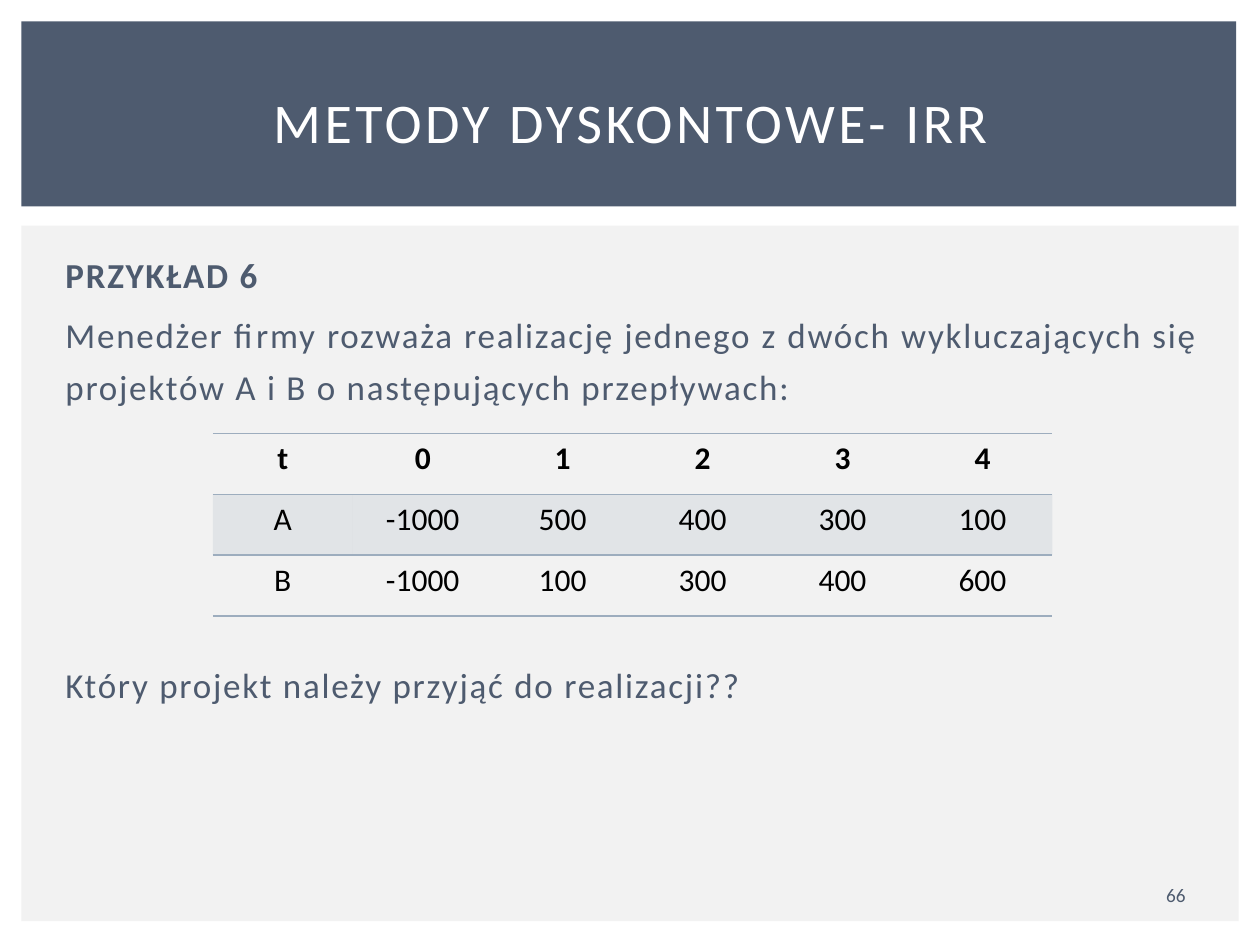
from collections import namedtuple

from lxml import etree
from pptx import Presentation
from pptx import util as u
from pptx.dml.color import RGBColor
from pptx.enum import shapes, text
from pptx.oxml import ns

Box = namedtuple("Box", "left top width height")  # centimetres

COLORS = {"slate": "4E5B6F", "panel": "F2F2F2", "white": "FFFFFF",
          "black": "000000", "accent": "9DADBE"}
FONT = "Calibri"
PLAIN_TABLE = "{2D5ABB26-0587-4C30-8999-92F81FD0307C}"
CASH_FLOWS = [
    ["t", "0", "1", "2", "3", "4"],
    ["A", "-1000", "500", "400", "300", "100"],
    ["B", "-1000", "100", "300", "400", "600"],
]


def color(name):
    return RGBColor.from_string(COLORS[name])


def lengths(box):
    return [u.Cm(value) for value in box]


def inside(box, left, top, width, height):
    return Box(box.left + left, box.top + top, width, height)


def add_panel(page, box, fill):
    panel = page.shapes.add_shape(shapes.MSO_SHAPE.RECTANGLE, *lengths(box))
    panel.shadow.inherit = False
    panel.fill.solid()
    panel.fill.fore_color.rgb = color(fill)
    panel.line.fill.background()


def style(para, size, fill, bold=False, align=text.PP_ALIGN.CENTER, spacing=0):
    para.alignment = align
    para.font.name = FONT
    para.font.size = u.Pt(size)
    para.font.bold = bold
    para.font.color.rgb = color(fill)
    if spacing:
        for span in para.runs:
            span.font.bold = bold
            span.font.size = u.Pt(size)
            span.font._element.set("spc", str(spacing * 100))


def add_text_frame(page, box, anchor):
    frame = page.shapes.add_textbox(*lengths(box)).text_frame
    frame.word_wrap = True
    frame.vertical_anchor = anchor
    return frame


def add_header(page, box):
    add_panel(page, box, "slate")
    frame = add_text_frame(page, inside(box, 0.64, 0.56, 23.29, 2.92),
                           text.MSO_ANCHOR.MIDDLE)
    frame.text = "METODY DYSKONTOWE- IRR"
    style(frame.paragraphs[0], 32, "white", spacing=2)


def add_body(page, box):
    add_panel(page, box, "panel")

    # Problem text; the wide gap leaves room for the table
    frame = add_text_frame(page, inside(box, 0.64, 0.23, 23.34, 13.54),
                           text.MSO_ANCHOR.TOP)
    lines = [
        ("PRZYKŁAD 6", True, 4),
        ("Menedżer firmy rozważa realizację jednego z dwóch wykluczających się "
         "projektów A i B o następujących przepływach:", False, 4),
        ("Który projekt należy przyjąć do realizacji??", False, 140),
    ]
    frame.text = "\n".join(line for line, _, _ in lines)
    for para, (_, bold, gap) in zip(frame.paragraphs, lines):
        style(para, 20, "slate", bold, text.PP_ALIGN.JUSTIFY, spacing=1)
        para.line_spacing = 1.25
        para.space_before = u.Pt(gap)

    add_cash_flows(page, inside(box, 3.86, 4.19, 16.93, 3.68))

    # Page number
    frame = add_text_frame(page, inside(box, 22.46, 13.1, 1.63, 0.76),
                           text.MSO_ANCHOR.MIDDLE)
    frame.text = "66"
    style(frame.paragraphs[0], 11, "slate")


def add_border(cell, side):
    props = cell._tc.get_or_add_tcPr()
    line = etree.Element(ns.qn("a:ln" + side), w=str(u.Pt(1)))
    fill = etree.SubElement(line, ns.qn("a:solidFill"))
    etree.SubElement(fill, ns.qn("a:srgbClr"), val=COLORS["accent"])
    borders = [child for child in props if "}ln" in child.tag]
    props.insert(len(borders), line)


def shade(cell, fill, opacity):
    cell.fill.solid()
    cell.fill.fore_color.rgb = color(fill)
    for tint in cell._tc.tcPr.iter(ns.qn("a:srgbClr")):
        etree.SubElement(tint, ns.qn("a:alpha"), val=str(opacity * 1000))


def add_cash_flows(page, box):
    rows, columns = len(CASH_FLOWS), len(CASH_FLOWS[0])
    table = page.shapes.add_table(rows, columns, *lengths(box)).table
    table.horz_banding = False
    table._tbl.tblPr.find(ns.qn("a:tableStyleId")).text = PLAIN_TABLE

    for r, values in enumerate(CASH_FLOWS):
        sides = {0: "TB", 1: "T", rows - 1: "B"}[r]
        for c, value in enumerate(values):
            cell = table.cell(r, c)
            cell.text = value
            style(cell.text_frame.paragraphs[0], 18, "black", bold=r == 0)
            if r == 1:
                shade(cell, "accent", 20)
            else:
                cell.fill.background()
            for side in sides:
                add_border(cell, side)


def main():
    deck = Presentation()
    deck.slide_width, deck.slide_height = u.Cm(25.4), u.Cm(19.05)
    page = deck.slides.add_slide(deck.slide_layouts[6])
    add_body(page, Box(0.43, 4.55, 24.54, 14.02))
    add_header(page, Box(0.43, 0.43, 24.49, 3.73))
    deck.save("out.pptx")


if __name__ == "__main__":
    main()
